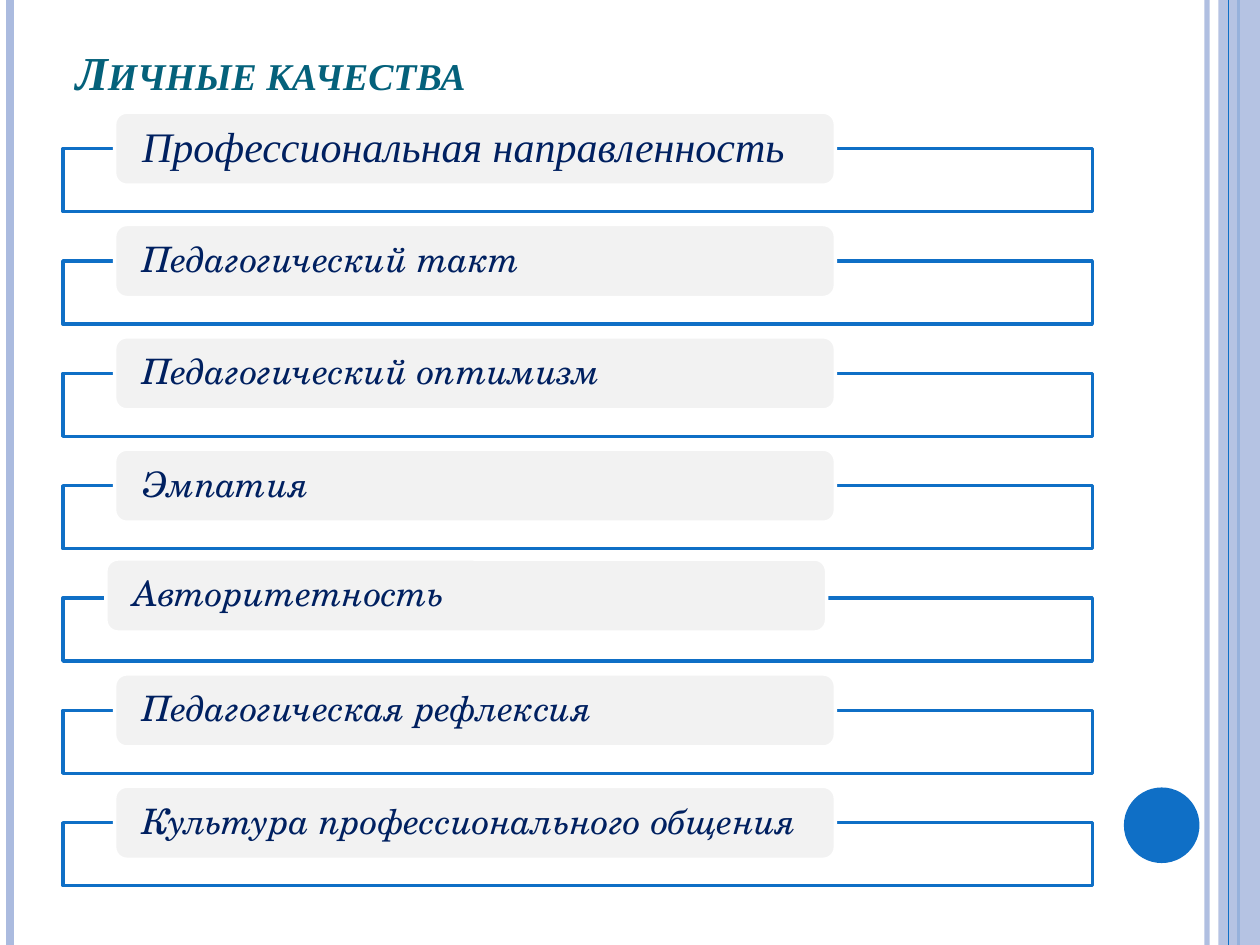
import dataclasses

import lxml.etree
import pptx
import pptx.dml.color
import pptx.enum.shapes
import pptx.enum.text
import pptx.oxml.ns
import pptx.util

Inches = pptx.util.Inches
Pt = pptx.util.Pt
RGBColor = pptx.dml.color.RGBColor
Kind = pptx.enum.shapes.MSO_SHAPE
Anchor = pptx.enum.text.MSO_ANCHOR
qn = pptx.oxml.ns.qn

BLUE = RGBColor(0x0F, 0x6F, 0xC6)
PALE = RGBColor(0xAB, 0xBB, 0xDF)
TEAL = RGBColor(0x04, 0x61, 0x7B)
NAVY = RGBColor(0x00, 0x20, 0x60)
GRAY = RGBColor(0xF2, 0xF2, 0xF2)
WHITE = RGBColor(0xFF, 0xFF, 0xFF)

SERIF = "Times New Roman"
SCHOLA = "TeX Gyre Schola"
TOP = 1.18
STEP = (6.53 - TOP) / 6
RISE = 0.29


@dataclasses.dataclass
class Stripe:
    x: float
    width: float
    color: RGBColor
    alpha: int = 100


@dataclasses.dataclass
class Trait:
    text: str
    font: str = SCHOLA
    size: int = 20
    left: float = 0.91
    lift: float = RISE


STRIPES = [
    Stripe(9.58, 3, PALE, 93),
    Stripe(0.08, 4.5, PALE),
    Stripe(9.83, 1.5, BLUE),
]
EDGE = Stripe(9.75, 0.75, BLUE)

TRAITS = [
    Trait("Профессиональная направленность", SERIF, 24),
    Trait("Педагогический такт"),
    Trait("Педагогический оптимизм"),
    Trait("Эмпатия"),
    Trait("Авторитетность", left=0.84, lift=0.31),
    Trait("Педагогическая рефлексия"),
    Trait("Культура профессионального общения"),
]


def fade(part, alpha: int) -> None:
    if alpha < 100:
        color = next(part.iter(qn("a:srgbClr")))
        lxml.etree.SubElement(color, qn("a:alpha"), val=str(alpha * 1000))


def write(frame, text: str, *, font: str, size: int, color: RGBColor,
          bold: bool = False, small: bool = False, anchor=Anchor.MIDDLE,
          inset: float = 0.1, pad: float = 0, space: float = 1) -> None:
    frame.word_wrap = True
    frame.auto_size = pptx.enum.text.MSO_AUTO_SIZE.NONE
    frame.vertical_anchor = anchor
    frame.margin_left = frame.margin_right = Inches(inset)
    frame.margin_top = frame.margin_bottom = Inches(pad)
    para = frame.paragraphs[0]
    para.alignment = pptx.enum.text.PP_ALIGN.LEFT
    para.line_spacing = space
    run = para.add_run()
    run.text = text
    run.font.name = font
    run.font.size = Pt(size)
    run.font.color.rgb = color
    run.font.bold = bold
    run.font.italic = True
    if small:
        run.font._element.set("cap", "small")


def draw_shape(slide, kind, left: float, top: float, width: float,
               height: float, fill: RGBColor, line: RGBColor | None = None,
               alpha: int = 100):
    shape = slide.shapes.add_shape(
        kind, Inches(left), Inches(top), Inches(width), Inches(height))
    shape.shadow.inherit = False
    shape.fill.solid()
    shape.fill.fore_color.rgb = fill
    fade(shape._element.spPr, alpha)
    if line is None:
        shape.line.fill.background()
    else:
        shape.line.color.rgb = line
        shape.line.width = Pt(2)
    return shape


def draw_stripe(slide, stripe: Stripe) -> None:
    x = Inches(stripe.x)
    line = slide.shapes.add_connector(
        pptx.enum.shapes.MSO_CONNECTOR.STRAIGHT, x, 0, x, Inches(7.5))
    line.line.color.rgb = stripe.color
    line.line.width = Pt(stripe.width)
    props = line._element.spPr
    fade(props, stripe.alpha)
    lxml.etree.SubElement(props, qn("a:effectLst"))


def draw_trait(slide, trait: Trait, top: float) -> None:
    draw_shape(slide, Kind.RECTANGLE, 0.5, top, 8.17, 0.5, WHITE, BLUE, 90)
    label = draw_shape(slide, Kind.ROUNDED_RECTANGLE, trait.left,
                       top - trait.lift, 5.72, 0.58, GRAY, WHITE)
    write(label.text_frame, trait.text, font=trait.font, size=trait.size,
          color=NAVY, inset=0.19, space=0.9)


def main() -> None:
    deck = pptx.Presentation()
    deck.slide_width = Inches(10)
    deck.slide_height = Inches(7.5)
    slide = deck.slides.add_slide(deck.slide_layouts[5])

    for stripe in STRIPES:
        draw_stripe(slide, stripe)
    draw_shape(slide, Kind.RECTANGLE, 9.67, 0, 0.33, 7.5, PALE, alpha=87)
    draw_stripe(slide, EDGE)
    draw_shape(slide, Kind.OVAL, 8.92, 6.25, 0.6, 0.6, BLUE)

    title = slide.shapes.title
    title.left, title.top = Inches(0.5), Inches(0.3)
    title.width, title.height = Inches(8.17), Inches(0.54)
    write(title.text_frame, "Личные качества", font=SERIF, size=27,
          color=TEAL, bold=True, small=True, anchor=Anchor.BOTTOM, pad=0.05)

    for row, trait in enumerate(TRAITS):
        draw_trait(slide, trait, TOP + row * STEP)

    deck.save("out.pptx")


if __name__ == "__main__":
    main()
